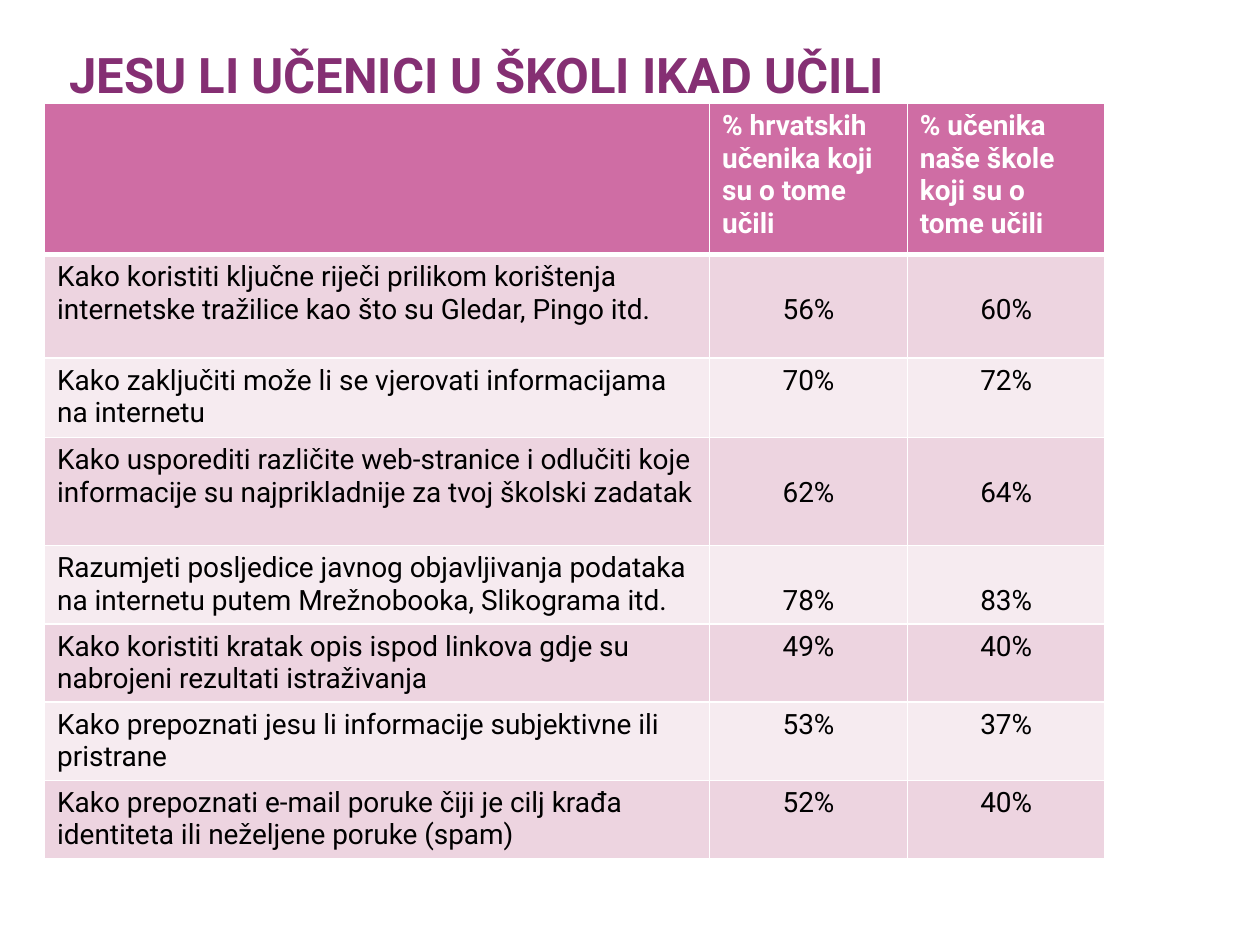
from lxml.etree import SubElement
from pptx import Presentation
from pptx.dml.color import RGBColor
from pptx.enum.text import MSO_ANCHOR, MSO_AUTO_SIZE, PP_ALIGN
from pptx.oxml.ns import qn
from pptx.util import Pt

COLORS = {
    "title": "852F73",
    "header": "CF6DA4",
    "odd": "EDD4E0",
    "even": "F6EBF0",
    "white": "FFFFFF",
    "text": "000000",
}
TITLE_FONT = {"name": "Roboto", "size": Pt(28), "bold": True}
HEADER_FONT = {"name": "Roboto", "size": Pt(16), "bold": True}
BODY_FONT = {"name": "Roboto", "size": Pt(16), "bold": False}
LINE_HEIGHT = 18.75
CELL_MARGIN = 3.6
COLUMN_WIDTHS = [380, 113, 113]
HEADER_HEIGHT = 86.4
HEADERS = ["", "% hrvatskih učenika koji su o tome učili",
           "% učenika naše škole koji su o tome učili"]
# Topic, Croatian share, school share, row height, text line holding the shares
TOPICS = [
    ("Kako koristiti ključne riječi prilikom korištenja internetske tražilice "
     "kao što su Gledar, Pingo itd.", "56%", "60%", 59, 2),
    ("Kako zaključiti može li se vjerovati informacijama na internetu",
     "70%", "72%", 45.4, 1),
    ("Kako usporediti različite web-stranice i odlučiti koje informacije su "
     "najprikladnije za tvoj školski zadatak", "62%", "64%", 61.9, 2),
    ("Razumjeti posljedice javnog objavljivanja podataka na internetu putem "
     "Mrežnobooka, Slikograma itd.", "78%", "83%", 44.7, 2),
    ("Kako koristiti kratak opis ispod linkova gdje su nabrojeni rezultati "
     "istraživanja", "49%", "40%", 44.7, 1),
    ("Kako prepoznati jesu li informacije subjektivne ili pristrane",
     "53%", "37%", 44.7, 1),
    ("Kako prepoznati e-mail poruke čiji je cilj krađa identiteta ili "
     "neželjene poruke (spam)", "52%", "40%", 44.7, 1),
]


def set_values(target, values):
    for name, value in values.items():
        setattr(target, name, value)


def write(frame, text, font, color, align=PP_ALIGN.LEFT):
    para = frame.paragraphs[0]
    para.alignment = align
    span = para.add_run()
    span.text = text
    set_values(span.font, font)
    span.font.color.rgb = RGBColor.from_string(COLORS[color])


def add_borders(cell, widths):
    """Draw white cell borders; widths maps the sides L, R, T, B to points."""
    properties = cell._tc.get_or_add_tcPr()
    for side, width in widths.items():
        line = SubElement(properties, qn(f"a:ln{side}"), w=str(Pt(width)))
        fill = SubElement(line, qn("a:solidFill"))
        SubElement(fill, qn("a:srgbClr"), val=COLORS["white"])


def paint_cell(cell, color, top=1, bottom=1):
    add_borders(cell, {"L": 1, "R": 1, "T": top, "B": bottom})
    cell.fill.solid()
    cell.fill.fore_color.rgb = RGBColor.from_string(COLORS[color])


def place_title(page, left, top, width, height):
    title = page.shapes.title
    set_values(title, {"left": Pt(left), "top": Pt(top),
                       "width": Pt(width), "height": Pt(height)})
    frame = title.text_frame
    set_values(frame, {
        "margin_left": Pt(3.6), "margin_right": Pt(3.6),
        "margin_top": 0, "margin_bottom": 0, "word_wrap": True,
        "vertical_anchor": MSO_ANCHOR.BOTTOM, "auto_size": MSO_AUTO_SIZE.NONE,
    })
    write(frame, "JESU LI UČENICI U ŠKOLI IKAD UČILI", TITLE_FONT, "title")


def place_survey_table(page, left, top):
    heights = [HEADER_HEIGHT] + [topic[3] for topic in TOPICS]
    table = page.shapes.add_table(
        len(heights), len(COLUMN_WIDTHS), Pt(left), Pt(top),
        Pt(sum(COLUMN_WIDTHS)), Pt(sum(heights))).table
    for column, width in zip(table.columns, COLUMN_WIDTHS):
        column.width = Pt(width)
    for row, height in zip(table.rows, heights):
        row.height = Pt(height)

    for cell, text in zip(table.rows[0].cells, HEADERS):
        paint_cell(cell, "header", bottom=3)
        if text:
            write(cell.text_frame, text, HEADER_FONT, "white")

    for number, (topic, croatia, school, _, share_line) in enumerate(TOPICS, 1):
        cells = table.rows[number].cells
        for index, (cell, text) in enumerate(zip(cells, (topic, croatia, school))):
            paint_cell(cell, "odd" if number % 2 else "even",
                       top=3 if number == 1 else 1)
            if index:
                cell.margin_top = Pt(CELL_MARGIN + (share_line - 1) * LINE_HEIGHT)
            write(cell.text_frame, text, BODY_FONT, "text",
                  PP_ALIGN.CENTER if index else PP_ALIGN.LEFT)


def main():
    deck = Presentation()
    deck.slide_width, deck.slide_height = Pt(720), Pt(540)
    page = deck.slides.add_slide(deck.slide_layouts[5])
    place_title(page, 36, 15, 570, 44)
    place_survey_table(page, 25.5, 59.2)
    deck.save("out.pptx")


if __name__ == "__main__":
    main()
